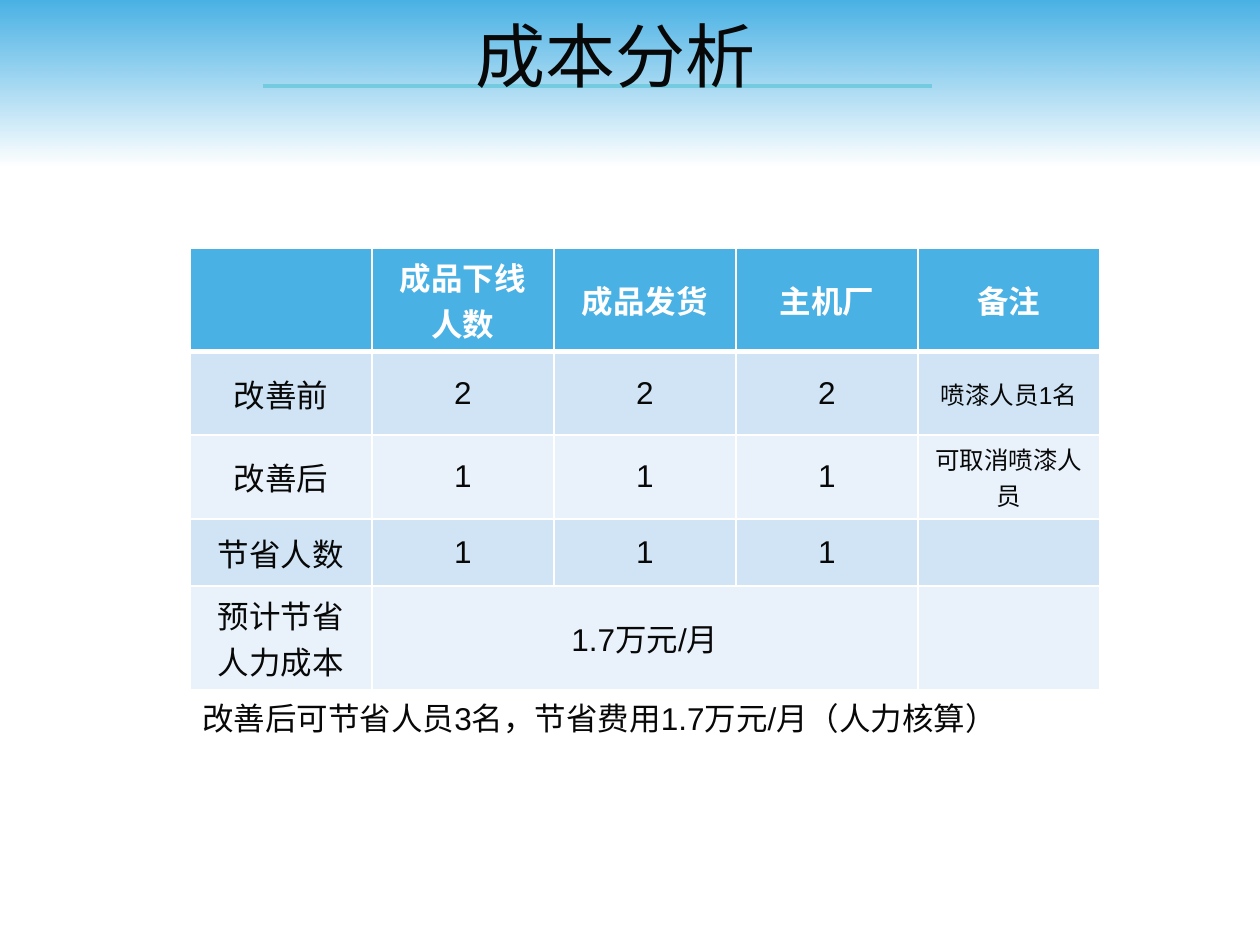
from dataclasses import dataclass

from lxml import etree
from pptx import Presentation
from pptx.dml.color import RGBColor
from pptx.enum.shapes import MSO_CONNECTOR, MSO_SHAPE
from pptx.enum.text import MSO_ANCHOR, MSO_AUTO_SIZE, PP_ALIGN
from pptx.oxml.ns import qn
from pptx.util import Pt

STRAIGHT = MSO_CONNECTOR.STRAIGHT
RECTANGLE = MSO_SHAPE.RECTANGLE
MIDDLE = MSO_ANCHOR.MIDDLE
CENTER, LEFT = PP_ALIGN.CENTER, PP_ALIGN.LEFT
NO_FIT = MSO_AUTO_SIZE.NONE
TITLE_ONLY = 5

TITLE = "成本分析"
COSTS = [
    ["", "成品下线人数", "成品发货", "主机厂", "备注"],
    ["改善前", "2", "2", "2", "喷漆人员1名"],
    ["改善后", "1", "1", "1", "可取消喷漆人员"],
    ["节省人数", "1", "1", "1", ""],
    ["预计节省人力成本", "1.7万元/月", "", "", ""],
]
SUMMARY = "改善后可节省人员3名，节省费用1.7万元/月（人力核算）"

SLIDE = (1260, 945)
BAND = (0, 0, 1260, 168)
UNDERLINE = (263, 86, 932, 86)
TITLE_BOX = (353, 16, 525, 78)
TABLE_AT = (190, 248)
COLUMN_WIDTH = 182
ROW_HEIGHTS = [102, 83, 63, 67, 102]
SUMMARY_BOX = (190, 693, 906, 50)


@dataclass(frozen=True)
class Theme:
    accent: str = "4AB1E4"
    underline: str = "74CBE0"
    white: str = "FFFFFF"
    ink: str = "080808"
    bands: tuple = ("E9F2FA", "D0E4F5")
    latin: str = "Arial"
    chinese: str = "Noto Sans CJK SC"
    title_size: int = 40
    text_size: int = 18
    remark_size: int = 14
    rule: int = 1
    header_rule: int = 3


THEME = Theme()


def px(*lengths):
    return [round(length * 914400 / 126) for length in lengths]


def rgb(color):
    return RGBColor.from_string(color)


def write(frame, text, size, color=THEME.ink, latin=THEME.latin, bold=False, align=CENTER):
    frame.text = text
    paragraph = frame.paragraphs[0]
    paragraph.alignment = align
    font = paragraph.font
    font.size, font.bold, font.name = Pt(size), bold, latin
    font.color.rgb = rgb(color)
    defaults = paragraph._p.pPr.find(qn("a:defRPr"))
    etree.SubElement(defaults, qn("a:ea"), typeface=THEME.chinese)


def add_border(cell, side, width):
    properties = cell._tc.get_or_add_tcPr()
    line = etree.SubElement(properties, qn(f"a:ln{side}"), w=str(Pt(width)))
    fill = etree.SubElement(line, qn("a:solidFill"))
    etree.SubElement(fill, qn("a:srgbClr"), val=THEME.white)


def add_header_band(slide):
    band = slide.shapes.add_shape(RECTANGLE, *px(*BAND))
    band.shadow.inherit = False
    band.line.fill.background()
    band.fill.gradient()
    band.fill.gradient_angle = 270
    for stop, color, position in zip(band.fill.gradient_stops, (THEME.accent, THEME.white), (0, 1)):
        stop.color.rgb = rgb(color)
        stop.position = position
    underline = slide.shapes.add_connector(STRAIGHT, *px(*UNDERLINE))
    underline.line.color.rgb = rgb(THEME.underline)
    underline.line.width = Pt(2.25)
    etree.SubElement(underline._element.spPr, qn("a:effectLst"))


def add_title(slide):
    title = slide.shapes.title
    title.left, title.top, title.width, title.height = px(*TITLE_BOX)
    frame = title.text_frame
    frame.auto_size, frame.word_wrap, frame.vertical_anchor = NO_FIT, False, MIDDLE
    write(frame, TITLE, THEME.title_size, latin=THEME.chinese)
    slide.shapes._spTree.append(title._element)


def add_costs(slide):
    row_count, column_count = len(COSTS), len(COSTS[0])
    size = (COLUMN_WIDTH * column_count, sum(ROW_HEIGHTS))
    table = slide.shapes.add_table(row_count, column_count, *px(*TABLE_AT, *size)).table
    for column in table.columns:
        column.width = px(COLUMN_WIDTH)[0]
    for row, height in zip(table.rows, px(*ROW_HEIGHTS)):
        row.height = height
    for r, entries in enumerate(COSTS):
        header = r == 0
        for c, entry in enumerate(entries):
            cell = table.cell(r, c)
            remark = not header and c == column_count - 1 and entry
            cell.vertical_anchor = MIDDLE
            write(cell.text_frame, entry,
                  THEME.remark_size if remark else THEME.text_size,
                  THEME.white if header else THEME.ink, bold=header)
            for side in "LRTB":
                heavy = (r, side) in ((0, "B"), (1, "T"))
                add_border(cell, side, THEME.header_rule if heavy else THEME.rule)
            cell.fill.solid()
            cell.fill.fore_color.rgb = rgb(THEME.accent if header else THEME.bands[r % 2])
    last = row_count - 1
    table.cell(last, 1).merge(table.cell(last, column_count - 2))


def add_summary(slide):
    frame = slide.shapes.add_textbox(*px(*SUMMARY_BOX)).text_frame
    frame.word_wrap = True
    write(frame, SUMMARY, THEME.text_size, align=LEFT)


def main():
    deck = Presentation()
    deck.slide_width, deck.slide_height = px(*SLIDE)
    slide = deck.slides.add_slide(deck.slide_layouts[TITLE_ONLY])
    add_header_band(slide)
    add_title(slide)
    add_costs(slide)
    add_summary(slide)
    deck.save("out.pptx")


if __name__ == "__main__":
    main()
